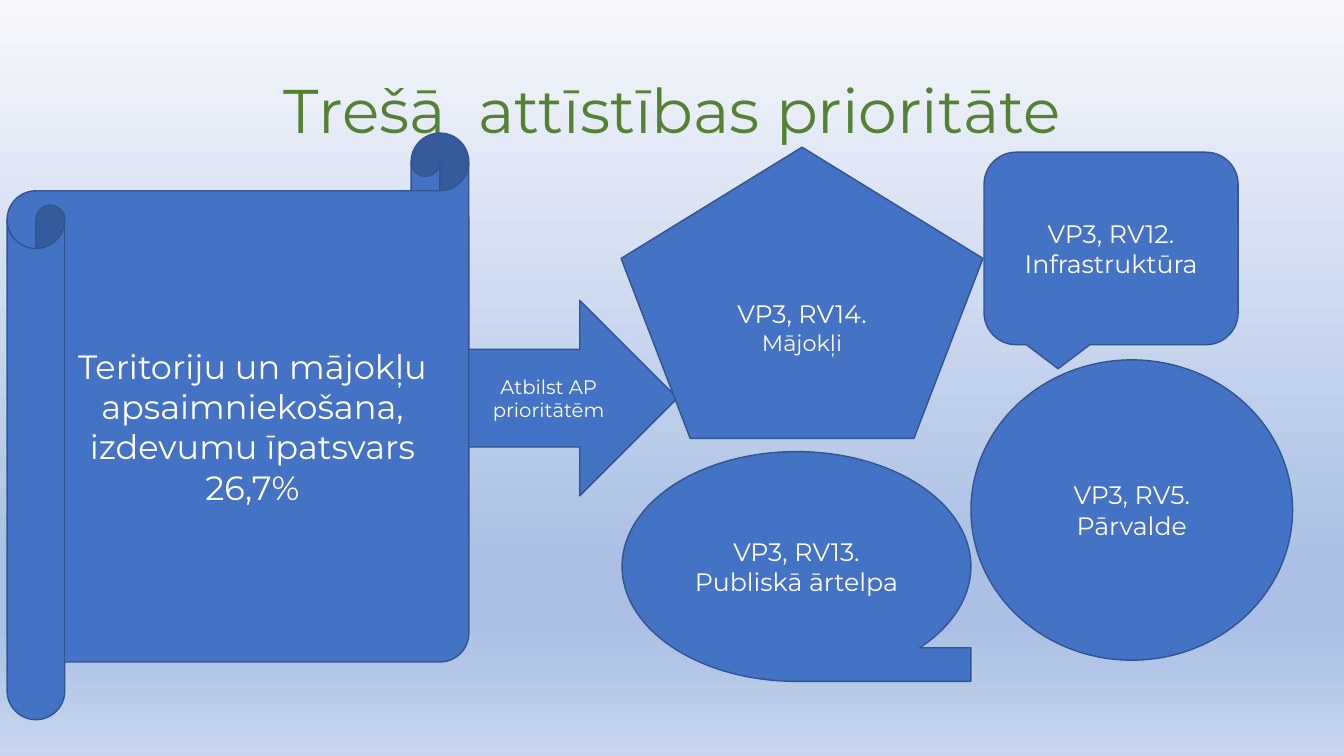
from copy import deepcopy
from dataclasses import dataclass

from pptx import Presentation
from pptx import util as u
from pptx.dml.color import RGBColor
from pptx.enum import shapes, text


@dataclass(frozen=True)
class Theme:
    font: str = "Montserrat"
    title_color: str = "548235"
    fill: str = "4472C4"
    outline: str = "325491"
    label_color: str = "FFFFFF"
    background: tuple = ((0, "F6F8FC"), (0.74, "ABC0E4"), (0.83, "ABC0E4"), (1, "C7D5ED"))
    title_size: int = 44
    scroll_size: int = 24
    label_size: int = 18
    small_size: int = 16
    arrow_size: int = 14


class SlideBuilder:
    def __init__(self, slide, theme):
        self.slide = slide
        self.theme = theme

    def background(self):
        fill = self.slide.background.fill
        fill.gradient()
        fill.gradient_angle = 270
        stop_list = self.slide.element.xpath(".//a:gsLst")[0]
        while len(stop_list) < len(self.theme.background):
            stop_list.append(deepcopy(stop_list[0]))
        for stop, (position, color) in zip(fill.gradient_stops, self.theme.background):
            stop.position = position
            stop.color.rgb = RGBColor.from_string(color)

    def label(self, shape, lines, color, spacing=1.0):
        frame = shape.text_frame
        frame.word_wrap = True
        frame.vertical_anchor = text.MSO_ANCHOR.MIDDLE
        for index, (words, size) in enumerate(lines):
            paragraph = frame.add_paragraph() if index else frame.paragraphs[0]
            paragraph.alignment = text.PP_ALIGN.CENTER
            paragraph.line_spacing = spacing
            run = paragraph.add_run()
            run.text = words
            font_format = {"name": self.theme.font, "size": u.Pt(size)}
            for name, value in font_format.items():
                setattr(run.font, name, value)
            run.font.color.rgb = RGBColor.from_string(color)

    def title(self, box, words):
        shape = self.slide.shapes.add_textbox(*map(u.Inches, box))
        self.label(shape, [(words, self.theme.title_size)], self.theme.title_color, 0.9)

    def block(self, kind, box, lines):
        shape = self.slide.shapes.add_shape(kind, *map(u.Inches, box))
        shape.shadow.inherit = False
        shape.fill.solid()
        shape.fill.fore_color.rgb = RGBColor.from_string(self.theme.fill)
        shape.line.color.rgb = RGBColor.from_string(self.theme.outline)
        shape.line.width = u.Pt(1)
        self.label(shape, lines, self.theme.label_color)


def main():
    presentation = Presentation()
    presentation.slide_width = u.Inches(13.33)
    presentation.slide_height = u.Inches(7.5)
    theme = Theme()
    builder = SlideBuilder(presentation.slides.add_slide(presentation.slide_layouts[6]), theme)
    regular, small = theme.label_size, theme.small_size
    kinds = shapes.MSO_SHAPE

    builder.background()
    builder.title((0.92, 0.4, 11.5, 1.45), "Trešā  attīstības prioritāte")

    blocks = [
        (kinds.HORIZONTAL_SCROLL, (0.07, 1.32, 4.58, 5.82),
         [("Teritoriju un mājokļu apsaimniekošana, izdevumu īpatsvars 26,7%", theme.scroll_size)]),
        (kinds.RIGHT_ARROW, (4.65, 2.98, 2.07, 1.94),
         [("Atbilst AP prioritātēm", theme.arrow_size)]),
        (kinds.REGULAR_PENTAGON, (6.16, 1.46, 3.59, 2.89),
         [("VP3, RV14.", regular), ("Mājokļi", small)]),
        (kinds.ROUNDED_RECTANGULAR_CALLOUT, (9.76, 1.51, 2.52, 1.91),
         [("VP3, RV12.", regular), ("Infrastruktūra", regular)]),
        (kinds.FLOWCHART_SEQUENTIAL_ACCESS_STORAGE, (6.17, 4.48, 3.46, 2.28),
         [("VP3, RV13.", regular), ("Publiskā ārtelpa", regular)]),
        (kinds.OVAL, (9.63, 3.57, 3.19, 2.98),
         [("VP3, RV5.", regular), ("Pārvalde", regular)]),
    ]
    for kind, box, lines in blocks:
        builder.block(kind, box, lines)

    presentation.save("out.pptx")


if __name__ == "__main__":
    main()
